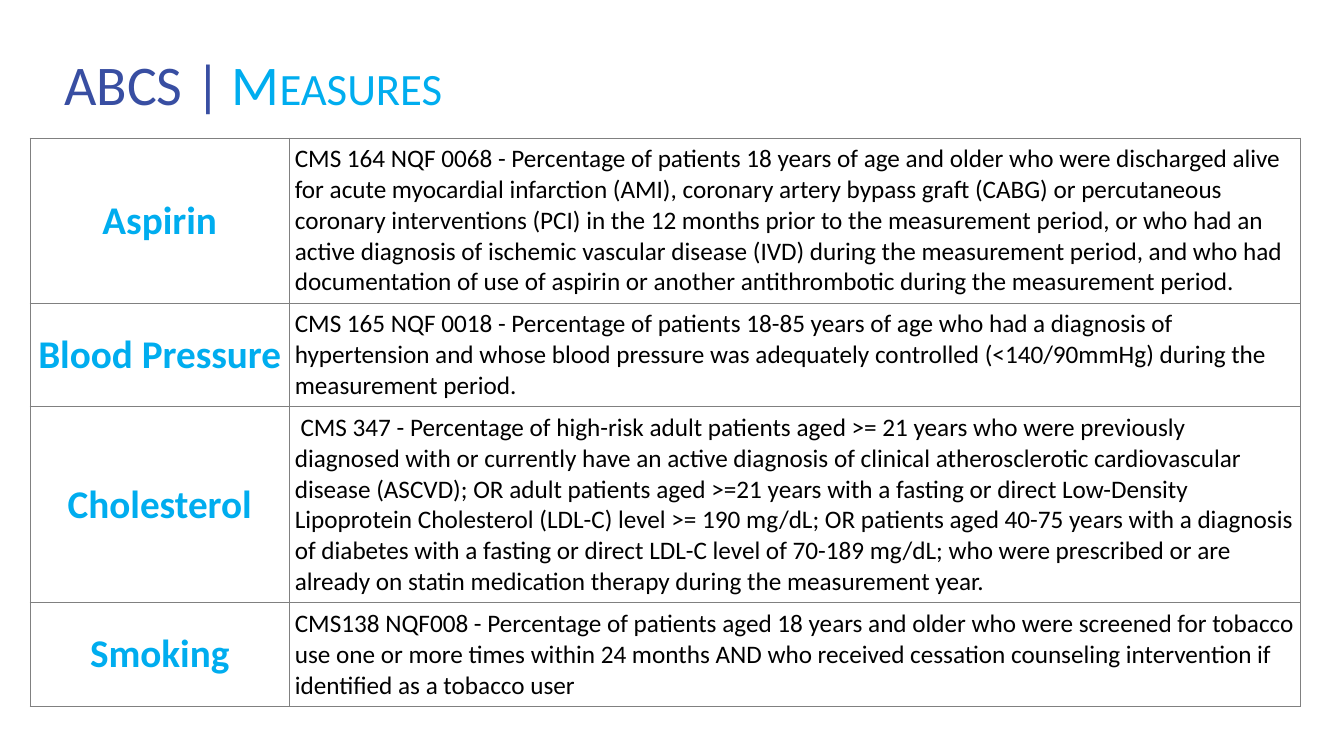
from lxml import etree
from pptx import Presentation
from pptx.dml.color import RGBColor
from pptx.enum.text import MSO_ANCHOR, PP_ALIGN
from pptx.oxml.ns import qn
from pptx.util import Cm, Pt

MIDDLE = MSO_ANCHOR.MIDDLE
LEFT, CENTER = PP_ALIGN.LEFT, PP_ALIGN.CENTER
INDIGO = RGBColor(0x38, 0x4E, 0xA2)
CYAN = RGBColor(0x00, 0xAD, 0xEF)
BLACK = RGBColor(0x00, 0x00, 0x00)
GRAY = RGBColor(0x80, 0x80, 0x80)
WHITE = RGBColor(0xFF, 0xFF, 0xFF)

HEADINGS = [
    {"text": "ABCS |", "left": 1.37, "width": 6.27, "color": INDIGO, "caps": "none", "opacity": 88},
    {"text": "Measures", "left": 5.59, "width": 16.89, "color": CYAN, "caps": "small", "opacity": 0},
]
HEADING_TOP, HEADING_HEIGHT = 0.91, 2.57

MEASURES = [
    ("Aspirin", "CMS 164 NQF 0068 - Percentage of patients 18 years of age and older who were discharged alive for acute myocardial infarction (AMI), coronary artery bypass graft (CABG) or percutaneous coronary interventions (PCI) in the 12 months prior to the measurement period, or who had an active diagnosis of ischemic vascular disease (IVD) during the measurement period, and who had documentation of use of aspirin or another antithrombotic during the measurement period."),
    ("Blood Pressure", "CMS 165 NQF 0018 - Percentage of patients 18-85 years of age who had a diagnosis of hypertension and whose blood pressure was adequately controlled (<140/90mmHg) during the measurement period."),
    ("Cholesterol", " CMS 347 - Percentage of high-risk adult patients aged >= 21 years who were previously diagnosed with or currently have an active diagnosis of clinical atherosclerotic cardiovascular disease (ASCVD); OR adult patients aged >=21 years with a fasting or direct Low-Density Lipoprotein Cholesterol (LDL-C) level >= 190 mg/dL; OR patients aged 40-75 years with a diagnosis of diabetes with a fasting or direct LDL-C level of 70-189 mg/dL; who were prescribed or are already on statin medication therapy during the measurement year."),
    ("Smoking", "CMS138 NQF008 - Percentage of patients aged 18 years and older who were screened for tobacco use one or more times within 24 months AND who received cessation counseling intervention if identified as a tobacco user"),
]
TABLE_LEFT, TABLE_TOP = 0.76, 3.48
COLUMN_WIDTHS = [6.53, 25.49]
ROW_HEIGHTS = [4.16, 2.61, 4.94, 2.61]
CELL_FORMAT = {"vertical_anchor": MIDDLE, "margin_left": Cm(0.14), "margin_right": Cm(0.14),
               "margin_top": Cm(0.14), "margin_bottom": Cm(0.14)}
COLUMN_STYLES = [
    (CENTER, CYAN, {"name": "Calibri", "size": Pt(28), "bold": True}),
    (LEFT, BLACK, {"name": "Calibri", "size": Pt(18), "bold": False}),
]
HEADING_FONT = {"name": "Calibri", "size": Pt(40)}


def set_attributes(target, values):
    for name, value in values.items():
        setattr(target, name, value)


def write_text(paragraph, text, alignment, color, font_format):
    paragraph.alignment = alignment
    run = paragraph.add_run()
    run.text = text
    set_attributes(run.font, font_format)
    run.font.color.rgb = color
    return run


def add_borders(cell):
    properties = cell._tc.get_or_add_tcPr()
    for side in ("a:lnL", "a:lnR", "a:lnT", "a:lnB"):
        line = etree.SubElement(properties, qn(side), w=str(Pt(1)))
        fill = etree.SubElement(line, qn("a:solidFill"))
        etree.SubElement(fill, qn("a:srgbClr"), val=str(GRAY))


def fill_white(box, opacity):
    box.fill.solid()
    box.fill.fore_color.rgb = WHITE
    color = box._element.spPr.find(qn("a:solidFill")).find(qn("a:srgbClr"))
    etree.SubElement(color, qn("a:alpha"), val=str(opacity * 1000))


def add_heading(slide, heading):
    box = slide.shapes.add_textbox(Cm(heading["left"]), Cm(HEADING_TOP),
                                   Cm(heading["width"]), Cm(HEADING_HEIGHT))
    if heading["opacity"]:
        fill_white(box, heading["opacity"])
    set_attributes(box.text_frame, {"word_wrap": True, "vertical_anchor": MIDDLE})
    paragraph = box.text_frame.paragraphs[0]
    paragraph.line_spacing = 0.9
    run = write_text(paragraph, heading["text"], LEFT, heading["color"], HEADING_FONT)
    run._r.get_or_add_rPr().set("cap", heading["caps"])


def add_measures_table(slide):
    frame = slide.shapes.add_table(len(MEASURES), len(COLUMN_WIDTHS), Cm(TABLE_LEFT), Cm(TABLE_TOP),
                                   Cm(sum(COLUMN_WIDTHS)), Cm(sum(ROW_HEIGHTS)))
    table = frame.table
    set_attributes(table, {"first_row": False, "horz_banding": False})
    for column, width in zip(table.columns, COLUMN_WIDTHS):
        column.width = Cm(width)
    for row, height, measure in zip(table.rows, ROW_HEIGHTS, MEASURES):
        row.height = Cm(height)
        for cell, text, style in zip(row.cells, measure, COLUMN_STYLES):
            set_attributes(cell, CELL_FORMAT)
            add_borders(cell)
            cell.fill.background()
            write_text(cell.text_frame.paragraphs[0], text, *style)


def main():
    presentation = Presentation()
    presentation.slide_width, presentation.slide_height = Cm(33.87), Cm(19.05)
    slide = presentation.slides.add_slide(presentation.slide_layouts[6])
    for heading in HEADINGS:
        add_heading(slide, heading)
    add_measures_table(slide)
    presentation.save("out.pptx")


if __name__ == "__main__":
    main()
